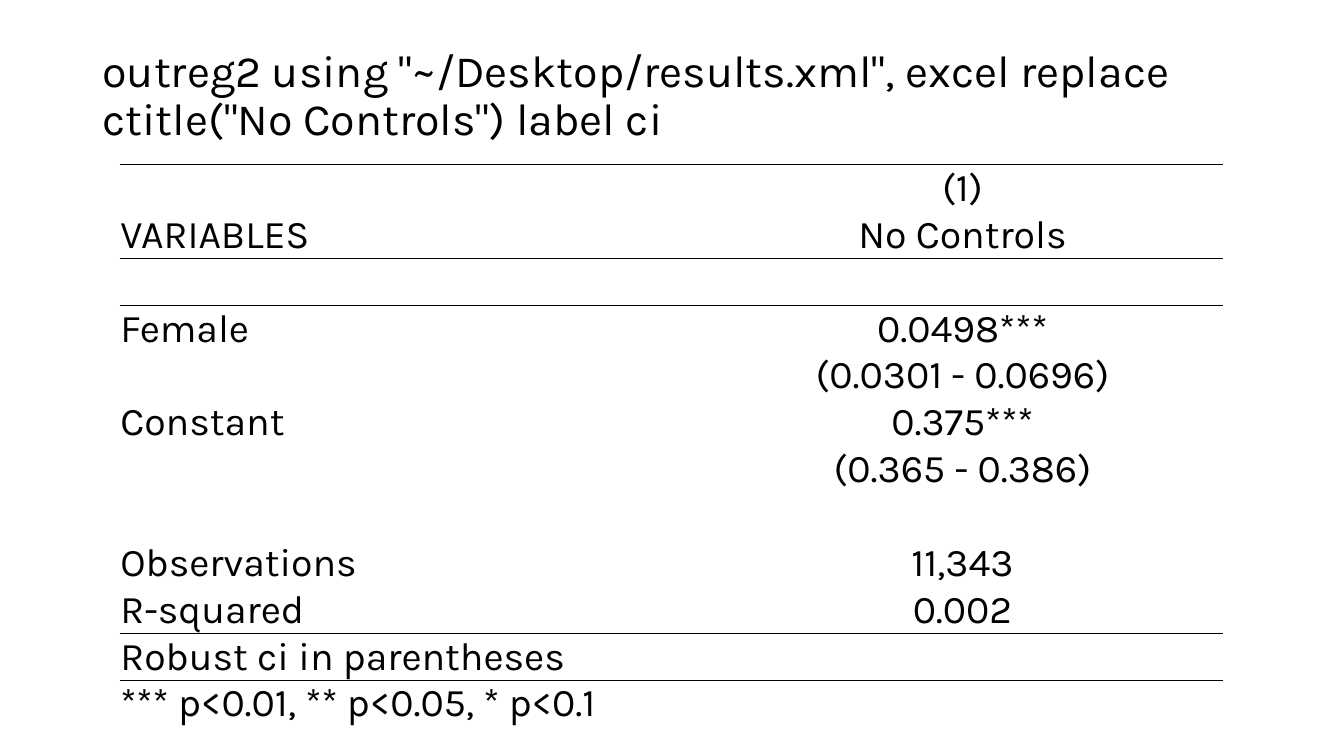
"""Build a slide showing an outreg2 command and its regression table."""
from lxml import etree
from pptx import Presentation
from pptx.dml.color import RGBColor
from pptx.enum.text import MSO_ANCHOR, PP_ALIGN
from pptx.oxml.ns import qn
from pptx.util import Pt

MIDDLE, BOTTOM = MSO_ANCHOR.MIDDLE, MSO_ANCHOR.BOTTOM
LEFT, CENTER = PP_ALIGN.LEFT, PP_ALIGN.CENTER
BLACK = RGBColor(0, 0, 0)
FONT = "Karla"
PX = 6350
PLAIN_STYLE = "{2D5ABB26-0587-4C30-8999-92F81FD0307C}"
TITLE_ONLY = 5

COMMAND = 'outreg2 using "~/Desktop/results.xml", excel replace ctitle("No Controls") label ci'
RESULTS = [
    ("", "(1)"),
    ("VARIABLES", "No Controls"),
    ("", ""),
    ("Female", "0.0498***"),
    ("", "(0.0301 - 0.0696)"),
    ("Constant", "0.375***"),
    ("", "(0.365 - 0.386)"),
    ("", ""),
    ("Observations", "11,343"),
    ("R-squared", "0.002"),
    ("Robust ci in parentheses", ""),
    ("*** p<0.01, ** p<0.05, * p<0.1", ""),
]
RULES = {0: "a:lnT", 1: "a:lnB", 2: "a:lnT", 9: "a:lnB", 10: "a:lnT"}
COLUMN_WIDTHS = (832, 744)
ROW_HEIGHT = 67


def px(*lengths):
    return [length * PX for length in lengths]


def style_paragraph(para, size, alignment):
    para.alignment = alignment
    para.font.name = FONT
    para.font.size = Pt(size)
    para.font.color.rgb = BLACK


def add_title(page, text):
    title = page.shapes.title
    title.left, title.top, title.width, title.height = px(132, 37, 1617, 203)
    frame = title.text_frame
    frame.text = text
    frame.word_wrap = True
    frame.vertical_anchor = MIDDLE
    para = frame.paragraphs[0]
    para.line_spacing = 0.9
    style_paragraph(para, 32, LEFT)


def add_rule(cell, edge):
    properties = cell._tc.get_or_add_tcPr()
    line = etree.Element(qn(edge), w=str(Pt(0.5)))
    fill = etree.SubElement(line, qn("a:solidFill"))
    etree.SubElement(fill, qn("a:srgbClr"), val=str(BLACK))
    properties.insert(0, line)


def fill_cell(cell, text, alignment):
    cell.fill.background()
    cell.vertical_anchor = BOTTOM
    cell.margin_left = cell.margin_top = cell.margin_right = PX
    cell.margin_bottom = 0
    cell.text = text
    style_paragraph(cell.text_frame.paragraphs[0], 28, alignment)


def add_results_table(page):
    frame = page.shapes.add_table(
        len(RESULTS), len(COLUMN_WIDTHS),
        *px(171, 235, sum(COLUMN_WIDTHS), ROW_HEIGHT * len(RESULTS)))
    table = frame.table
    table.first_row = table.horz_banding = False
    table._tbl.tblPr.find(qn("a:tableStyleId")).text = PLAIN_STYLE
    for column, width in zip(table.columns, COLUMN_WIDTHS):
        column.width = width * PX
    for index, (row, texts) in enumerate(zip(table.rows, RESULTS)):
        row.height = ROW_HEIGHT * PX
        for cell, text, alignment in zip(row.cells, texts, (LEFT, CENTER)):
            fill_cell(cell, text, alignment)
            if index in RULES:
                add_rule(cell, RULES[index])


def main():
    deck = Presentation()
    deck.slide_width, deck.slide_height = px(1920, 1080)
    page = deck.slides.add_slide(deck.slide_layouts[TITLE_ONLY])
    add_title(page, COMMAND)
    add_results_table(page)
    deck.save("out.pptx")


if __name__ == "__main__":
    main()
